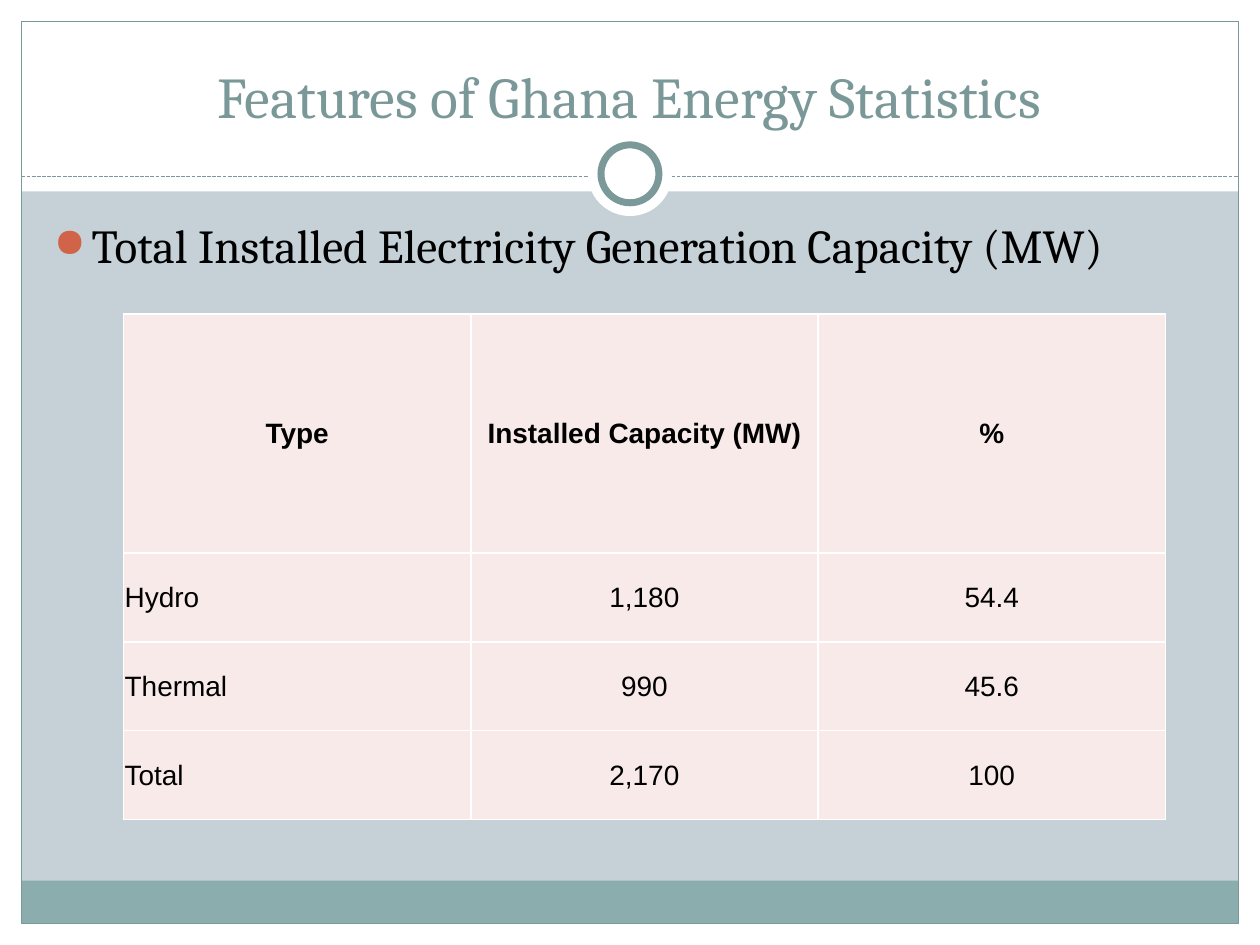
from dataclasses import dataclass

from lxml import etree
from pptx import Presentation
from pptx.dml.color import RGBColor
from pptx.enum.dml import MSO_LINE
from pptx.enum.shapes import MSO_CONNECTOR, MSO_SHAPE
from pptx.enum.text import MSO_ANCHOR, PP_ALIGN
from pptx.oxml.ns import qn
from pptx.util import Inches, Pt

RECTANGLE, OVAL = MSO_SHAPE.RECTANGLE, MSO_SHAPE.OVAL
STRAIGHT, DASH = MSO_CONNECTOR.STRAIGHT, MSO_LINE.SQUARE_DOT
LEFT, CENTER = PP_ALIGN.LEFT, PP_ALIGN.CENTER
MIDDLE, BOTTOM = MSO_ANCHOR.MIDDLE, MSO_ANCHOR.BOTTOM


@dataclass(frozen=True)
class Theme:
    background: str = "C5D1D7"
    white: str = "FFFFFF"
    band: str = "8CADAE"
    outline: str = "7C999A"
    title: str = "7B9899"
    bullet: str = "D16349"
    text: str = "000000"
    cell: str = "F7EAE9"
    serif: str = "Cambria"
    sans: str = "Arial"
    title_size: int = 33
    body_size: int = 27
    table_size: int = 16


THEME = Theme()
WIDTH, HEIGHT, MARGIN = 10, 7.5, 0.17
HEADER_HEIGHT = 1.52
RULE_TOP = 1.4
RING_CENTER = 1.38
ROWS = [
    ("Type", "Installed Capacity (MW)", "%"),
    ("Hydro", "1,180", "54.4"),
    ("Thermal", "990", "45.6"),
    ("Total", "2,170", "100"),
]


def rgb(color):
    return RGBColor.from_string(color)


def add_span(para, text, font, size, color, bold=False):
    span = para.add_run()
    span.text = text
    span.font.name = font
    span.font.size = Pt(size)
    span.font.bold = bold
    span.font.color.rgb = rgb(color)


def add_panel(page, kind, left, top, width, height, fill=None, line_width=None):
    panel = page.shapes.add_shape(
        kind, Inches(left), Inches(top), Inches(width), Inches(height))
    panel.shadow.inherit = False
    if fill:
        panel.fill.solid()
        panel.fill.fore_color.rgb = rgb(fill)
    else:
        panel.fill.background()
    if line_width:
        panel.line.color.rgb = rgb(THEME.outline)
        panel.line.width = Pt(line_width)
    else:
        panel.line.fill.background()


def add_circle(page, diameter, line_width=None):
    add_panel(page, OVAL, (WIDTH - diameter) / 2, RING_CENTER - diameter / 2,
              diameter, diameter, THEME.white, line_width)


def add_rule(page):
    rule = page.shapes.add_connector(
        STRAIGHT, Inches(MARGIN), Inches(RULE_TOP),
        Inches(WIDTH - MARGIN), Inches(RULE_TOP))
    rule.line.color.rgb = rgb(THEME.outline)
    rule.line.width = Pt(0.75)
    rule.line.dash_style = DASH
    etree.SubElement(rule._element.spPr, qn("a:effectLst"))


def add_frame(page):
    inner_width, inner_height = WIDTH - 2 * MARGIN, HEIGHT - 2 * MARGIN
    # White margins and header
    for area in [(0, HEIGHT - MARGIN, WIDTH, MARGIN),
                 (0, 0, WIDTH, HEADER_HEIGHT),
                 (0, 0, MARGIN, HEIGHT),
                 (WIDTH - MARGIN, 0, MARGIN, HEIGHT)]:
        add_panel(page, RECTANGLE, *area, fill=THEME.white)
    # Footer band and border
    add_panel(page, RECTANGLE, MARGIN, 6.99, inner_width, 0.34, THEME.band)
    add_panel(page, RECTANGLE, MARGIN, MARGIN, inner_width, inner_height,
              line_width=0.75)
    # Dashed rule with the ring on it
    add_rule(page)
    add_circle(page, 0.67)
    add_circle(page, 0.46, line_width=4)


def set_title(page, text):
    title = page.shapes.title
    title.left, title.top = Inches(0.33), Inches(0.25)
    title.width, title.height = Inches(9.33), Inches(0.83)
    frame = title.text_frame
    frame.word_wrap = True
    frame.vertical_anchor = BOTTOM
    para = frame.paragraphs[0]
    para.alignment = CENTER
    add_span(para, text, THEME.serif, THEME.title_size, THEME.title)
    # Bring the title in front of the header
    page.shapes._spTree.append(title._element)


def add_bullet(page, text):
    box = page.shapes.add_textbox(
        Inches(0.33), Inches(1.67), Inches(9.3), Inches(5))
    box.text_frame.word_wrap = True
    para = box.text_frame.paragraphs[0]
    para.space_before = Pt(5.4)
    properties = para._p.get_or_add_pPr()
    properties.set("marL", str(Inches(0.3)))
    properties.set("indent", str(-Inches(0.3)))
    color = etree.SubElement(properties, qn("a:buClr"))
    etree.SubElement(color, qn("a:srgbClr"), val=THEME.bullet)
    etree.SubElement(properties, qn("a:buSzPct"), val="85000")
    etree.SubElement(properties, qn("a:buChar"), char="●")
    add_span(para, text, THEME.serif, THEME.body_size, THEME.text)


def set_borders(cell):
    properties = cell._tc.get_or_add_tcPr()
    for index, side in enumerate(("lnL", "lnR", "lnT", "lnB")):
        line = etree.Element(qn(f"a:{side}"), w=str(Pt(1)))
        fill = etree.SubElement(line, qn("a:solidFill"))
        etree.SubElement(fill, qn("a:srgbClr"), val=THEME.white)
        properties.insert(index, line)


def fill_cell(cell, text, bold, alignment):
    cell.fill.solid()
    cell.fill.fore_color.rgb = rgb(THEME.cell)
    cell.vertical_anchor = MIDDLE
    cell.margin_left = cell.margin_right = cell.margin_top = Inches(0.01)
    cell.margin_bottom = 0
    para = cell.text_frame.paragraphs[0]
    para.alignment = alignment
    add_span(para, text, THEME.sans, THEME.table_size, THEME.text, bold)
    set_borders(cell)


def add_capacity_table(page, rows):
    table = page.shapes.add_table(
        len(rows), len(rows[0]), Inches(0.98), Inches(2.49),
        Inches(8.27), Inches(4.02)).table
    for row_index, values in enumerate(rows):
        header = row_index == 0
        table.rows[row_index].height = Inches(1.9 if header else 0.705)
        for column_index, value in enumerate(values):
            alignment = CENTER if header or column_index else LEFT
            fill_cell(table.cell(row_index, column_index), value, header, alignment)


def main():
    deck = Presentation()
    deck.slide_width, deck.slide_height = Inches(WIDTH), Inches(HEIGHT)
    page = deck.slides.add_slide(deck.slide_layouts[5])
    page.background.fill.solid()
    page.background.fill.fore_color.rgb = rgb(THEME.background)
    add_frame(page)
    set_title(page, "Features of Ghana Energy Statistics")
    add_bullet(page, "Total Installed Electricity Generation Capacity (MW)")
    add_capacity_table(page, ROWS)
    deck.save("out.pptx")


if __name__ == "__main__":
    main()
